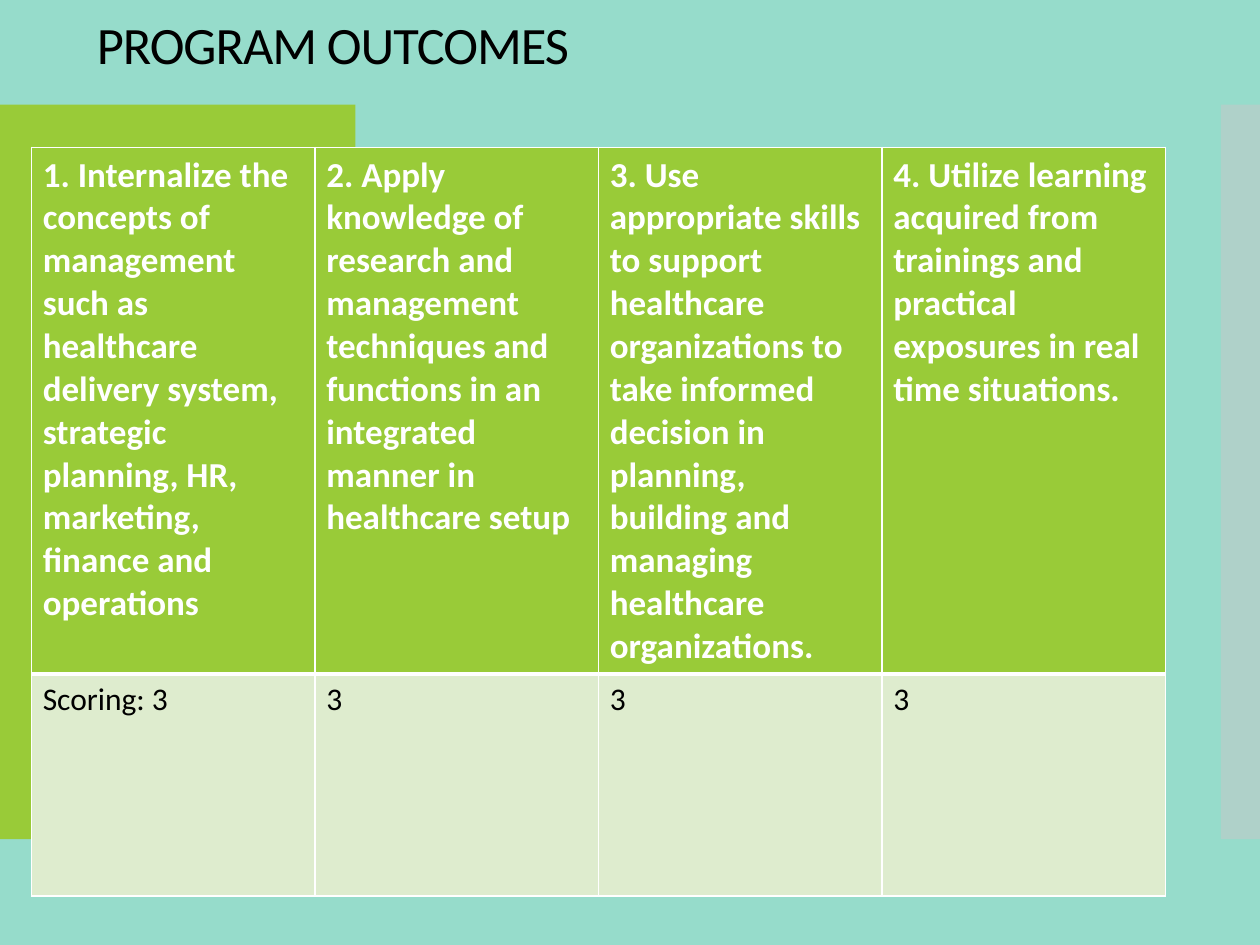
from dataclasses import dataclass
from typing import Any

from lxml import etree
from pptx import Presentation
from pptx import util as u
from pptx.dml.color import RGBColor
from pptx.enum import shapes, text
from pptx.oxml import ns

OUTCOMES = [
    "1. Internalize the concepts of management such as healthcare delivery system, "
    "strategic planning, HR, marketing, finance and operations",
    "2. Apply knowledge of research and management techniques and functions "
    "in an integrated manner in healthcare setup",
    "3. Use appropriate skills to support healthcare organizations to take informed "
    "decision in planning, building and managing healthcare organizations.",
    "4. Utilize learning acquired from trainings and practical exposures "
    "in real time situations.",
]
SCORES = ["Scoring: 3", "3", "3", "3"]


def paint(fill, color, alpha=None):
    fill.solid()
    fill.fore_color.rgb = RGBColor.from_string(color)
    if alpha is not None:
        tint = fill._xPr.find(ns.qn("a:solidFill"))[0]
        etree.SubElement(tint, ns.qn("a:alpha"), val=str(alpha * 1000))


def write(frame, words, *, font, size, color, bold=False, line_spacing=None, tracking=None):
    paragraph = frame.paragraphs[0]
    paragraph.line_spacing = line_spacing
    run = paragraph.add_run()
    run.text = words
    run.font.name = font
    run.font.size = u.Pt(size)
    run.font.bold = bold
    paint(run.font.fill, color)
    if tracking is not None:
        run.font._element.set("spc", str(round(tracking * 100)))


@dataclass
class OutcomeSlide:
    """Holds the slide's style and draws its elements."""

    slide: Any
    font: str = "Calibri"
    green: str = "99CB38"
    pale_green: str = "DEECCE"
    mint: str = "96DCCB"
    gray: str = "C8C8C8"
    black: str = "000000"
    white: str = "FFFFFF"

    def background(self):
        paint(self.slide.background.fill, self.mint)

    def band(self, left, width, color, alpha=None):
        band = self.slide.shapes.add_shape(
            shapes.MSO_SHAPE.RECTANGLE,
            u.Inches(left), u.Inches(0.83), u.Inches(width), u.Inches(5.83))
        band.shadow.inherit = False
        band.line.fill.background()
        paint(band.fill, color, alpha)

    def title(self, words):
        title = self.slide.shapes.add_textbox(
            u.Inches(0.67), 0, u.Inches(4.5), u.Inches(0.75))
        frame = title.text_frame
        frame.word_wrap = True
        frame.vertical_anchor = text.MSO_ANCHOR.MIDDLE
        write(frame, words, font=self.font, size=30, color=self.black,
              line_spacing=0.9, tracking=-0.6)

    def borders(self, cell, top, bottom):
        properties = cell._tc.get_or_add_tcPr()
        for side, width in (("L", 1), ("R", 1), ("T", top), ("B", bottom)):
            edge = etree.SubElement(
                properties, ns.qn(f"a:ln{side}"), w=str(u.Pt(width)))
            fill = etree.SubElement(edge, ns.qn("a:solidFill"))
            etree.SubElement(fill, ns.qn("a:srgbClr"), val=self.white)

    def table(self, outcomes, scores):
        header_style = dict(size=20, color=self.white, bold=True)
        score_style = dict(size=18, color=self.black)
        rows = [(outcomes, 4.18, self.green, (1, 3), header_style),
                (scores, 1.76, self.pale_green, (3, 1), score_style)]
        grid = self.slide.shapes.add_table(
            len(rows), len(outcomes),
            u.Inches(0.25), u.Inches(1.17), u.Inches(9), u.Inches(5.94)).table
        for row, (entries, height, fill, edges, style) in zip(grid.rows, rows):
            row.height = u.Inches(height)
            for cell, words in zip(row.cells, entries):
                cell.margin_left = cell.margin_right = u.Inches(0.09)
                cell.margin_top = cell.margin_bottom = u.Inches(0.05)
                self.borders(cell, *edges)
                paint(cell.fill, fill)
                write(cell.text_frame, words, font=self.font, **style)


def main():
    deck = Presentation()
    deck.slide_width, deck.slide_height = u.Inches(10), u.Inches(7.5)
    page = OutcomeSlide(deck.slides.add_slide(deck.slide_layouts[6]))
    page.background()
    page.band(0, 2.82, page.green)
    page.band(9.69, 0.32, page.gray, alpha=50)
    page.title("PROGRAM OUTCOMES")
    page.table(OUTCOMES, SCORES)
    deck.save("out.pptx")


if __name__ == "__main__":
    main()
